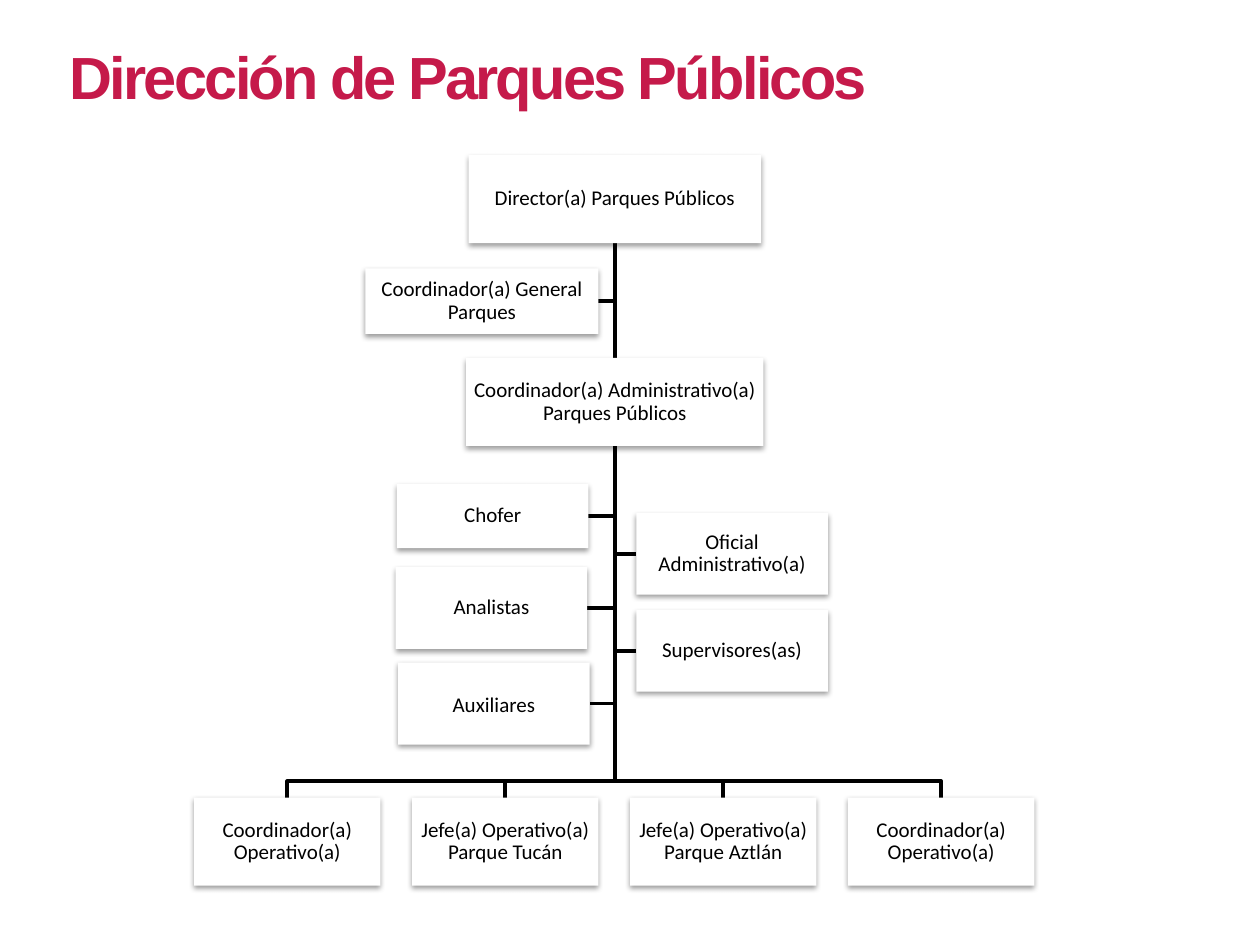
"""Build the organisation chart of the parks department."""
from dataclasses import dataclass

from lxml.etree import SubElement
from pptx import Presentation
from pptx.dml.color import RGBColor
from pptx.enum.shapes import MSO_CONNECTOR as Link, MSO_SHAPE as Kind
from pptx.enum.text import MSO_ANCHOR as Anchor, MSO_AUTO_SIZE as Fit, PP_ALIGN as Align
from pptx.oxml.ns import qn
from pptx.util import Inches, Pt

RED = RGBColor(0xC5, 0x1A, 0x4A)
BLACK = RGBColor(0, 0, 0)
WHITE = RGBColor(0xFF, 0xFF, 0xFF)
BUS = 6.2


@dataclass(frozen=True)
class Box:
    text: str
    x: float
    y: float
    w: float
    h: float
    lead: float = 0.9

    @property
    def mid(self) -> float:
        return self.x + self.w / 2

    @property
    def base(self) -> float:
        return self.y + self.h


HEAD = Box("Director(a) Parques Públicos", 3.72, 1.23, 2.32, 0.7)
ADMIN = Box("Coordinador(a) Administrativo(a) Parques Públicos", 3.7, 2.84, 2.36, 0.7)
AIDE = Box("Coordinador(a) General Parques", 2.9, 2.13, 1.85, 0.52)
STAFF = [
    Box("Chofer", 3.15, 3.84, 1.52, 0.51),
    Box("Oficial Administrativo(a)", 5.05, 4.07, 1.52, 0.65),
    Box("Analistas", 3.14, 4.5, 1.52, 0.65),
    Box("Supervisores(as)", 5.05, 4.84, 1.52, 0.65),
    Box("Auxiliares", 3.16, 5.26, 1.52, 0.65, 1.0),
]
TEAMS = [
    Box(text, 1.54 + 1.73 * i, 6.33, 1.48, 0.7)
    for i, text in enumerate([
        "Coordinador(a) Operativo(a)",
        "Jefe(a) Operativo(a) Parque Tucán",
        "Jefe(a) Operativo(a) Parque Aztlán",
        "Coordinador(a) Operativo(a)",
    ])
]


def write(frame, text: str, *, size: float, font: str, color: RGBColor,
          bold: bool = False, align=Align.CENTER, anchor=Anchor.MIDDLE,
          inset: float = 0.01, lead: float = 1.0, track: int = 0) -> None:
    frame.word_wrap = True
    frame.vertical_anchor = anchor
    if inset is not None:
        frame.margin_left = frame.margin_right = Inches(inset)
        frame.margin_top = frame.margin_bottom = Inches(inset)
    para = frame.paragraphs[0]
    para.alignment = align
    para.line_spacing = lead
    run = para.add_run()
    run.text = text
    run.font.size = Pt(size)
    run.font.name = font
    run.font.bold = bold
    run.font.color.rgb = color
    if track:
        run.font._element.set("spc", str(track))


def shade(shape) -> None:
    shape.shadow.inherit = False
    effects = shape._element.spPr.find(qn("a:effectLst"))
    outer = SubElement(effects, qn("a:outerShdw"), blurRad="40000", dist="20000",
                       dir="5400000", rotWithShape="0")
    tint = SubElement(outer, qn("a:srgbClr"), val=str(BLACK))
    SubElement(tint, qn("a:alpha"), val="38000")


def draw_box(slide, box: Box):
    shape = slide.shapes.add_shape(
        Kind.RECTANGLE, *map(Inches, (box.x, box.y, box.w, box.h)))
    shape.fill.solid()
    shape.fill.fore_color.rgb = WHITE
    shape.line.fill.background()
    shade(shape)
    write(shape.text_frame, box.text, size=12, font="Calibri", color=BLACK, lead=box.lead)
    return shape


def ink(line) -> None:
    line.color.rgb = BLACK
    line.width = Pt(2)


def draw_path(slide, *points: tuple[float, float]) -> None:
    start, *rest = [(Inches(x), Inches(y)) for x, y in points]
    pen = slide.shapes.build_freeform(*start)
    pen.add_line_segments(rest, close=False)
    shape = pen.convert_to_shape()
    shape.fill.background()
    shape.shadow.inherit = False
    ink(shape.line)


def branch(slide, boss: Box, box: Box) -> None:
    side = box.x + box.w if box.mid < boss.mid else box.x
    level = box.y + box.h / 2
    draw_path(slide, (boss.mid, boss.base), (boss.mid, level), (side, level))


def drop(slide, boss: Box, box: Box) -> None:
    draw_path(slide, (boss.mid, boss.base), (boss.mid, BUS), (box.mid, BUS), (box.mid, box.y))


def draw_trunk(slide, boss: Box, box: Box):
    line = slide.shapes.add_connector(
        Link.STRAIGHT, *map(Inches, (boss.mid, boss.base, box.mid, box.y)))
    SubElement(line._element.spPr, qn("a:effectLst"))
    ink(line.line)
    return line


def main() -> None:
    deck = Presentation()
    deck.slide_width, deck.slide_height = Inches(10), Inches(7.5)
    slide = deck.slides.add_slide(deck.slide_layouts[5])

    title = slide.shapes.title
    title.left, title.top, title.width, title.height = map(Inches, (0.45, 0.27, 7.79, 0.67))
    write(title.text_frame, "Dirección de Parques Públicos", size=34, font="Arial", color=RED,
          bold=True, align=Align.LEFT, anchor=Anchor.TOP, inset=None, track=-150)
    title.text_frame.auto_size = Fit.SHAPE_TO_FIT_TEXT

    branch(slide, HEAD, AIDE)
    for box in STAFF:
        branch(slide, ADMIN, box)
    for box in TEAMS:
        drop(slide, ADMIN, box)
    trunk = draw_trunk(slide, HEAD, ADMIN)

    trunk.begin_connect(draw_box(slide, HEAD), 2)
    trunk.end_connect(draw_box(slide, ADMIN), 0)
    for box in [*TEAMS, *STAFF, AIDE]:
        draw_box(slide, box)

    deck.save("out.pptx")


if __name__ == "__main__":
    main()
